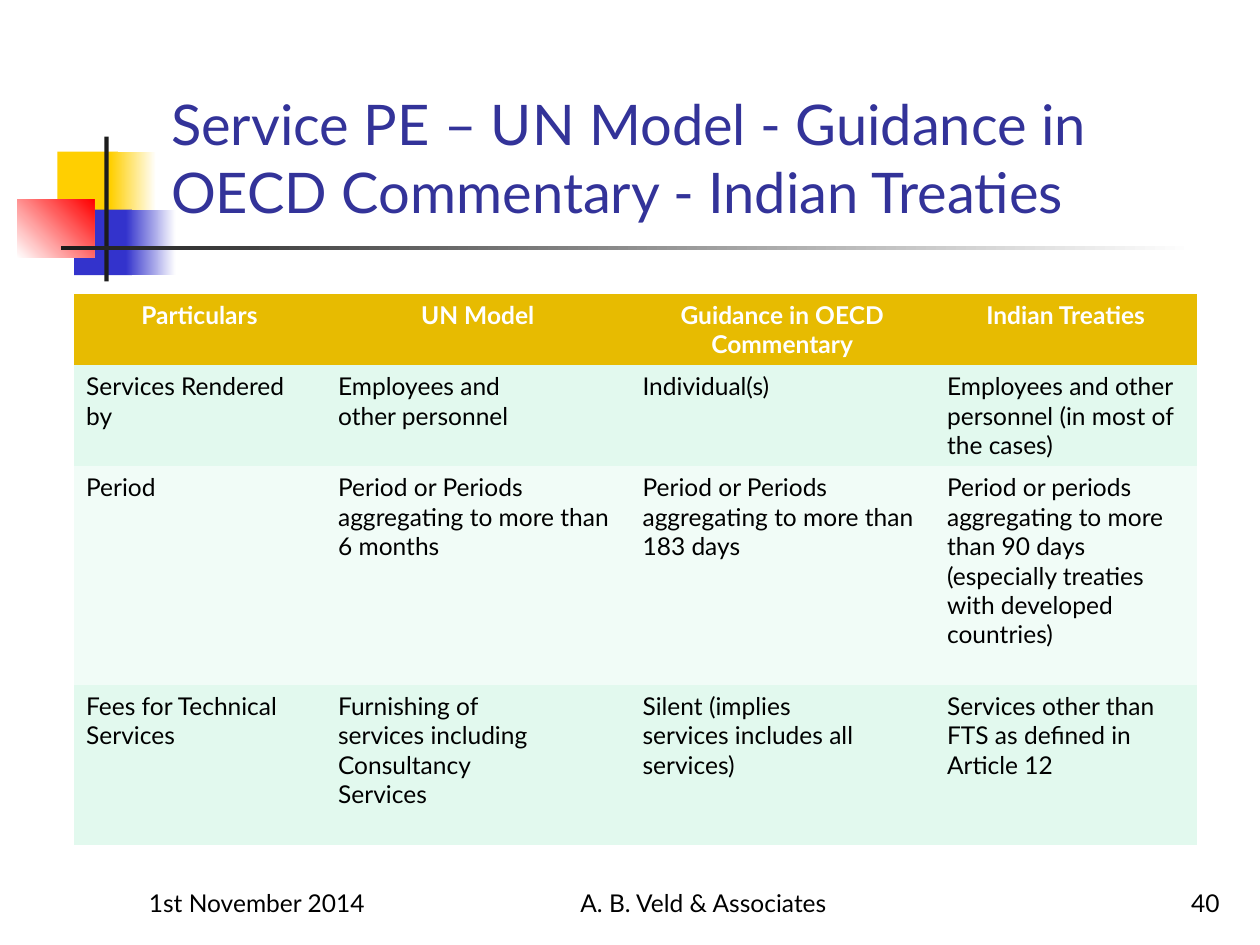
from dataclasses import dataclass

from pptx import Presentation
from pptx.dml.color import RGBColor
from pptx.enum.shapes import MSO_SHAPE as Shape
from pptx.enum.text import MSO_ANCHOR as Anchor, MSO_AUTO_SIZE as AutoSize, PP_ALIGN as Align
from pptx.oxml.ns import qn
from pptx.util import Pt


@dataclass(frozen=True)
class Theme:
    font: str = "Lato"
    title_size: int = 32
    text_size: int = 14
    title: str = "333399"
    text: str = "000000"
    paper: str = "FFFFFF"
    yellow: str = "FFCF01"
    blue: str = "3333CC"
    red: str = "FF0000"
    rule: str = "1C1C1C"
    header: str = "E7BB01"
    bands: tuple = ("E2F9EE", "F1FCF7")


@dataclass(frozen=True)
class Box:
    left: float
    top: float
    width: float
    height: float

    def place(self):
        return [Pt(length) for length in (self.left, self.top, self.width, self.height)]

    def inner(self, left, top, width, height):
        return Box(self.left + left, self.top + top, width, height)


THEME = Theme()
NO_STYLE_NO_GRID = "{2D5ABB26-0587-4C30-8999-92F81FD0307C}"
TITLE = "Service PE – UN Model - Guidance in OECD Commentary - Indian Treaties"
COLUMN_WIDTHS = (144, 174, 174, 150)
ROW_HEIGHTS = (40.8, 57.6, 125, 91.2)
ROWS = (
    ("Particulars", "UN Model", "Guidance in OECD\nCommentary", "Indian Treaties"),
    ("Services Rendered\nby", "Employees and\nother personnel", "Individual(s)",
     "Employees and other\npersonnel (in most of\nthe cases)"),
    ("Period", "Period or Periods aggregating to more than 6 months",
     "Period or Periods aggregating to more than 183 days",
     "Period or periods aggregating to more than 90 days "
     "(especially treaties with developed countries)"),
    ("Fees for Technical\nServices",
     "Furnishing of\nservices including\nConsultancy\nServices",
     "Silent (implies\nservices includes all\nservices)",
     "Services other than\nFTS as defined in\nArticle 12"),
)


def write(frame, text, align=Align.LEFT, **changes):
    """Fill a text frame, one paragraph a line, in the theme's font."""
    look = {"name": THEME.font, "size": Pt(THEME.text_size), "bold": False}
    color = changes.pop("color", THEME.text)
    look.update(changes)
    frame.text = text
    for para in frame.paragraphs:
        para.alignment = align
        for span in para.runs:
            for key, value in look.items():
                setattr(span.font, key, value)
            span.font.color.rgb = RGBColor.from_string(color)


def add_block(page, box, *colors, angle=0):
    """Add a borderless rectangle, solid for one colour and fading for two."""
    block = page.shapes.add_shape(Shape.RECTANGLE, *box.place())
    block.shadow.inherit = False
    block.line.fill.background()
    if len(colors) == 1:
        block.fill.solid()
        block.fill.fore_color.rgb = RGBColor.from_string(colors[0])
        return
    block.fill.gradient()
    block.fill.gradient_angle = angle
    for stop, color in zip(block.fill.gradient_stops, colors):
        stop.color.rgb = RGBColor.from_string(color)


def add_ornament(page, box):
    """Add the overlapping squares with the crossed rules."""
    add_block(page, box.inner(23, 8.6, 34.6, 37.4), THEME.yellow)
    add_block(page, box.inner(53.4, 8.6, 26, 37.4), THEME.yellow, THEME.paper)
    add_block(page, box.inner(32.6, 41.8, 33, 37.4), THEME.blue)
    add_block(page, box.inner(62, 41.8, 28.6, 37.4), THEME.blue, THEME.paper)
    add_block(page, box.inner(0, 36, 44, 33.2), THEME.paper, THEME.red, angle=45)
    add_block(page, box.inner(49.8, 0, 2.5, box.height), THEME.rule)
    add_block(page, box.inner(24.8, 62.4, box.width - 24.8, 2.5), THEME.rule, THEME.paper)


def add_title(page, box):
    title = page.shapes.title
    title.left, title.top, title.width, title.height = box.place()
    frame = title.text_frame
    frame.auto_size = AutoSize.NONE
    frame.word_wrap = True
    frame.vertical_anchor = Anchor.BOTTOM
    write(frame, TITLE, size=Pt(THEME.title_size), color=THEME.title)


def add_comparison(page, box):
    frame = page.shapes.add_table(len(ROWS), len(COLUMN_WIDTHS), *box.place())
    table = frame.table
    table.first_row = table.horz_banding = False
    for style in frame.element.iter(qn("a:tableStyleId")):
        style.text = NO_STYLE_NO_GRID
    for column, width in zip(table.columns, COLUMN_WIDTHS):
        column.width = Pt(width)
    for index, (row, height, texts) in enumerate(zip(table.rows, ROW_HEIGHTS, ROWS)):
        row.height = Pt(height)
        fill = THEME.bands[(index - 1) % 2] if index else THEME.header
        look = {} if index else {"align": Align.CENTER, "bold": True, "color": THEME.paper}
        for cell, text in zip(row.cells, texts):
            cell.fill.solid()
            cell.fill.fore_color.rgb = RGBColor.from_string(fill)
            write(cell.text_frame, text, **look)


def add_footer(page, box):
    parts = (
        (0, 150, "1st November 2014", Align.LEFT),
        (210, 228, "A. B. Veld & Associates", Align.CENTER),
        (box.width - 150, 150, "40", Align.RIGHT),
    )
    for left, width, text, align in parts:
        label = page.shapes.add_textbox(*box.inner(left, 0, width, box.height).place())
        frame = label.text_frame
        frame.word_wrap = True
        frame.vertical_anchor = Anchor.BOTTOM
        write(frame, text, align)


def main():
    deck = Presentation()
    deck.slide_width, deck.slide_height = Pt(720), Pt(540)
    page = deck.slides.add_slide(deck.slide_layouts.get_by_name("Title Only"))
    add_ornament(page, Box(9.8, 78, 672.8, 82.8))
    add_title(page, Box(90.6, 16.8, 613.4, 115))
    add_comparison(page, Box(42, 168, sum(COLUMN_WIDTHS), sum(ROW_HEIGHTS)))
    add_footer(page, Box(78, 492, 626, 36))
    deck.save("out.pptx")


if __name__ == "__main__":
    main()
